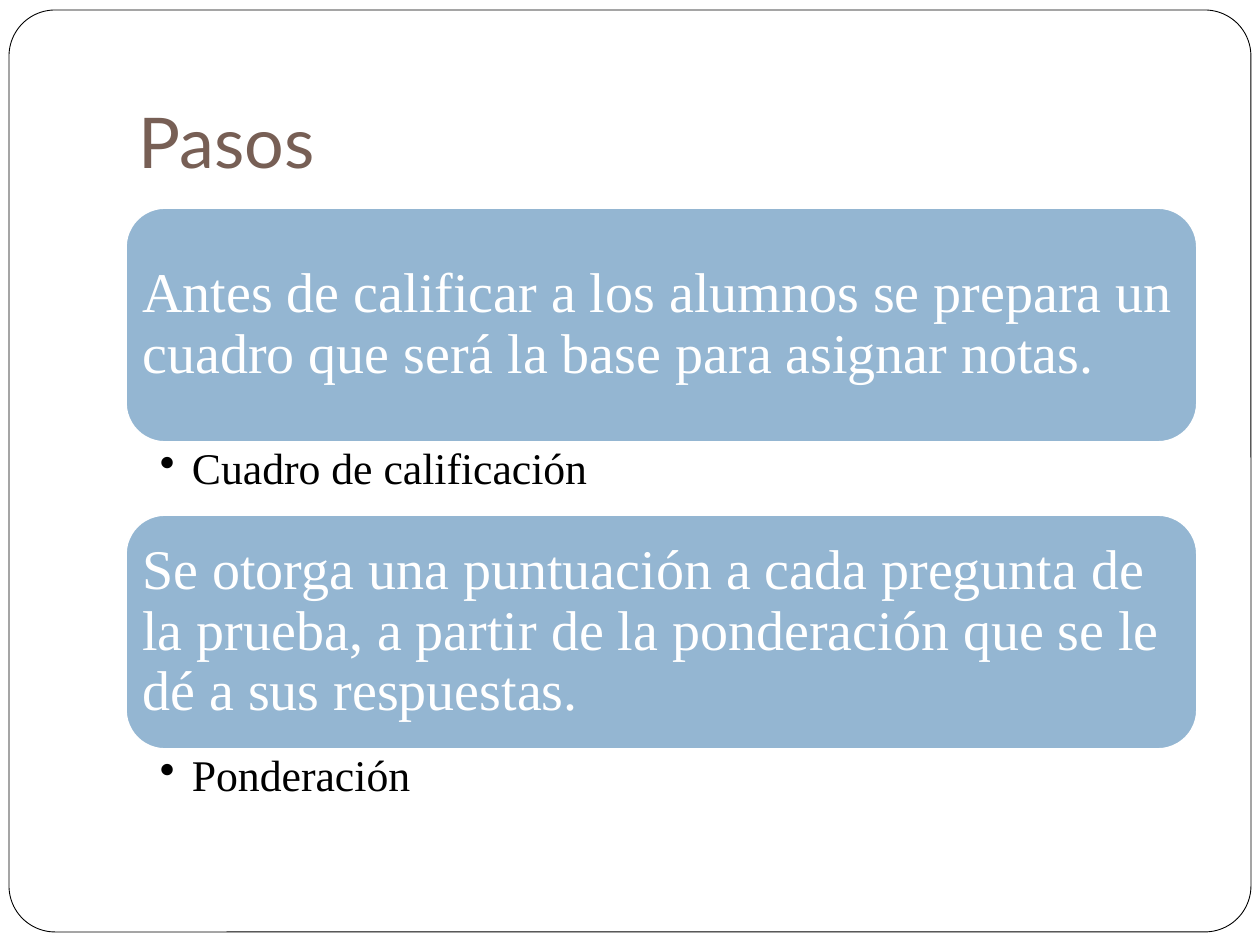
from lxml import etree
from pptx import Presentation
from pptx.dml.color import RGBColor
from pptx.enum.shapes import MSO_SHAPE
from pptx.enum.text import MSO_ANCHOR, PP_ALIGN
from pptx.oxml.ns import qn
from pptx.util import Pt

ROUNDED = MSO_SHAPE.ROUNDED_RECTANGLE
TOP, MIDDLE, BOTTOM = MSO_ANCHOR.TOP, MSO_ANCHOR.MIDDLE, MSO_ANCHOR.BOTTOM
LEFT_ALIGN = PP_ALIGN.LEFT
SERIF, SANS = "Times New Roman", "Lato"
WHITE, BLACK, BLUE, BROWN = "FFFFFF", "000000", "94B6D2", "775F55"
LEFT, WIDTH = 126, 1071
STEP_TOP, STEP_HEIGHT, DETAIL_HEIGHT = 208, 234, 73
STEPS = [
    ("Antes de calificar a los alumnos se prepara un cuadro que será la base "
     "para asignar notas.", "Cuadro de calificación"),
    ("Se otorga una puntuación a cada pregunta de la prueba, a partir de la "
     "ponderación que se le dé a sus respuestas.", "Ponderación"),
]


def px(n):
    """Convert pixels at 126 to the inch into EMU."""
    return round(n * 914400 / 126)


def color(value):
    """Return the colour of a hex string."""
    return RGBColor.from_string(value)


def write(sp, text, font, size, hex_color, anchor, insets, spacing=1.0):
    """Fill a shape with one left-aligned paragraph and return it."""
    tf = sp.text_frame
    tf.word_wrap = True
    tf.vertical_anchor = anchor
    tf.margin_left, tf.margin_top, tf.margin_right, tf.margin_bottom = map(px, insets)
    p = tf.paragraphs[0]
    p.alignment = LEFT_ALIGN
    p.line_spacing = spacing
    r = p.add_run()
    r.text = text
    r.font.name = font
    r.font.size = Pt(size)
    r.font.color.rgb = color(hex_color)
    return p


def add_rounded(s, x, y, w, h, fill, line, weight):
    """Add a rounded rectangle."""
    sp = s.shapes.add_shape(ROUNDED, px(x), px(y), px(w), px(h))
    sp.shadow.inherit = False
    sp.fill.solid()
    sp.fill.fore_color.rgb = color(fill)
    sp.line.color.rgb = color(line)
    sp.line.width = Pt(weight)
    return sp


def add_frame(s):
    """Add the thin frame around the slide."""
    sp = add_rounded(s, 9, 10, 1242, 922, WHITE, BLACK, 0.5)
    sp.adjustments[0] = 0.05


def add_title(s, text):
    """Add the slide title."""
    sp = s.shapes.add_textbox(px(LEFT), px(38), px(WIDTH), px(157))
    write(sp, text, SANS, 40, BROWN, BOTTOM, (13, 6, 13, 13))


def add_step(s, y, text):
    """Add the blue box of a step."""
    sp = add_rounded(s, LEFT, y, WIDTH, STEP_HEIGHT, BLUE, WHITE, 1)
    write(sp, text, SERIF, 32, WHITE, MIDDLE, (5, 5, 5, 5), 0.9)


def add_detail(s, y, text):
    """Add the bulleted line under a step."""
    sp = s.shapes.add_textbox(px(LEFT), px(y), px(WIDTH), px(DETAIL_HEIGHT))
    p = write(sp, text, SERIF, 25, BLACK, TOP, (34, 5, 32, 5), 0.9)
    pPr = p._p.get_or_add_pPr()
    pPr.set("marL", str(px(32)))
    pPr.set("indent", str(px(-32)))
    etree.SubElement(pPr, qn("a:buChar")).set("char", "•")


def main():
    """Build the slide and save it."""
    prs = Presentation()
    prs.slide_width, prs.slide_height = px(1260), px(945)
    s = prs.slides.add_slide(prs.slide_layouts[6])
    add_frame(s)
    add_title(s, "Pasos")
    for i, (step, detail) in enumerate(STEPS):
        y = STEP_TOP + i * (STEP_HEIGHT + DETAIL_HEIGHT)
        add_step(s, y, step)
        add_detail(s, y + STEP_HEIGHT, detail)
    prs.save("out.pptx")


if __name__ == "__main__":
    main()
